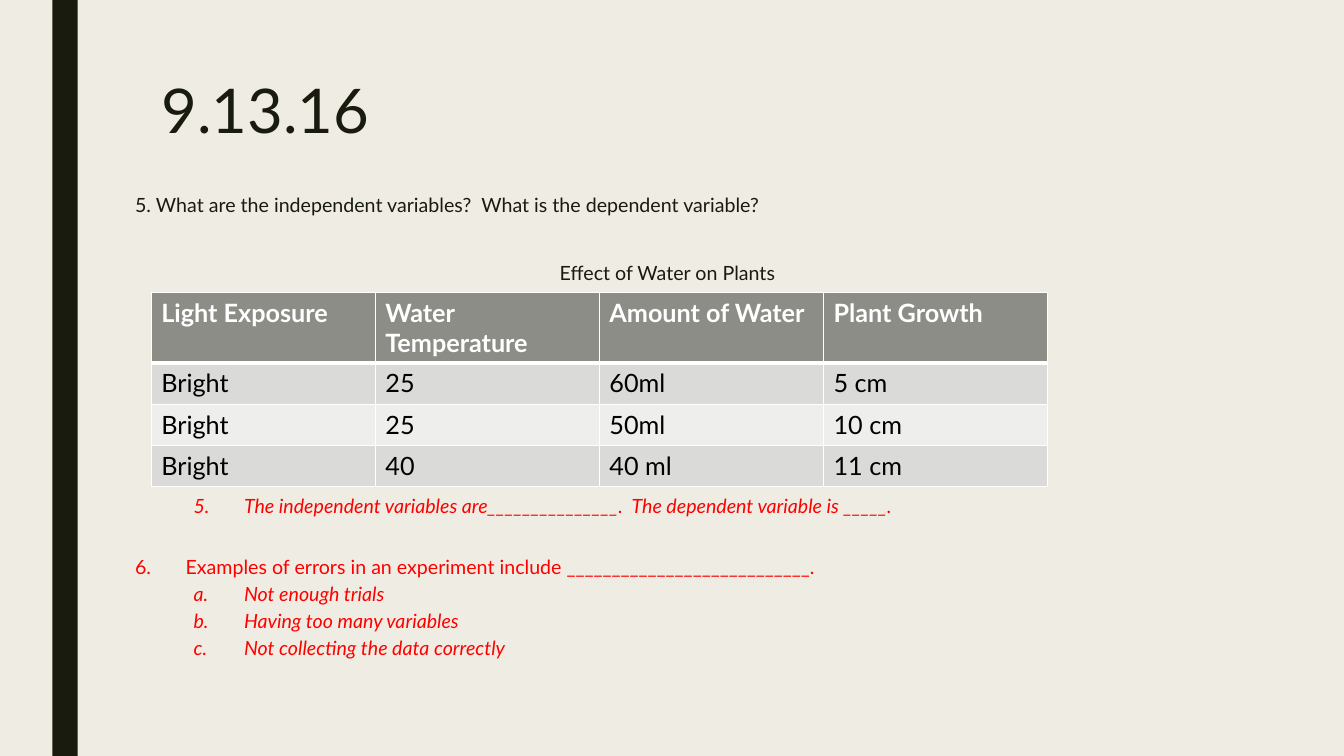
from lxml.etree import SubElement
from pptx import Presentation
from pptx.dml.color import RGBColor
from pptx.enum.shapes import MSO_SHAPE
from pptx.enum.text import MSO_ANCHOR, MSO_AUTO_SIZE, PP_ALIGN
from pptx.oxml.ns import qn
from pptx.util import Inches, Pt

CREAM = RGBColor(0xEF, 0xED, 0xE3)
INK = RGBColor(0x19, 0x1B, 0x0E)
RED = RGBColor(0xFF, 0x00, 0x00)
WHITE = RGBColor(0xFF, 0xFF, 0xFF)
BLACK = RGBColor(0x00, 0x00, 0x00)
HEADER_GRAY = RGBColor(0x8C, 0x8D, 0x86)
BAND_GRAYS = (RGBColor(0xEE, 0xEE, 0xED), RGBColor(0xDA, 0xDB, 0xD9))
FONT = "Lato"

PLANT_ROWS = [
    ("Light Exposure", "Water Temperature", "Amount of Water", "Plant Growth"),
    ("Bright", "25", "60ml", "5 cm"),
    ("Bright", "25", "50ml", "10 cm"),
    ("Bright", "40", "40 ml", "11 cm"),
]
QUESTION = {"color": INK, "italic": False, "level": 0, "margin": 0, "indent": 0}
ITEM = {"color": RED, "italic": False, "level": 0, "margin": 0.5, "indent": -0.5}
SUBITEM = {"color": RED, "italic": True, "level": 1, "margin": 1.08, "indent": -0.5}
BODY_LINES = [
    ("5. What are the independent variables?  What is the dependent variable?",
     QUESTION, PP_ALIGN.LEFT, 10, None),
    ("Effect of Water on Plants", QUESTION, PP_ALIGN.CENTER, 34, None),
    ("The independent variables are_______________.  The dependent variable is _____.",
     SUBITEM, PP_ALIGN.LEFT, 152, ("arabicPeriod", 5)),
    ("Examples of errors in an experiment include ___________________________.",
     ITEM, PP_ALIGN.LEFT, 29, ("arabicPeriod", 6)),
    ("Not enough trials", SUBITEM, PP_ALIGN.LEFT, 5, ("alphaLcPeriod", 1)),
    ("Having too many variables", SUBITEM, PP_ALIGN.LEFT, 5, ("alphaLcPeriod", 1)),
    ("Not collecting the data correctly", SUBITEM, PP_ALIGN.LEFT, 5, ("alphaLcPeriod", 1)),
]


def apply_format(target, values):
    for name, value in values.items():
        setattr(target, name, value)


def format_font(font, size, color, **values):
    apply_format(font, {"name": FONT, "size": Pt(size), **values})
    font.color.rgb = color


def place(shape, left, top, width, height):
    apply_format(shape, {"left": Inches(left), "top": Inches(top),
                         "width": Inches(width), "height": Inches(height)})


def prepare_text(shape):
    apply_format(shape.text_frame, {"word_wrap": True, "auto_size": MSO_AUTO_SIZE.NONE,
                                    "vertical_anchor": MSO_ANCHOR.TOP})


def add_sidebar(slide, left, top, width, height):
    sidebar = slide.shapes.add_shape(MSO_SHAPE.RECTANGLE, Inches(left), Inches(top),
                                     Inches(width), Inches(height))
    sidebar.shadow.inherit = False
    sidebar.fill.solid()
    sidebar.fill.fore_color.rgb = INK
    sidebar.line.fill.background()


def fill_title(slide, left, top, width, height):
    title = slide.shapes.title
    place(title, left, top, width, height)
    prepare_text(title)
    paragraph = title.text_frame.paragraphs[0]
    apply_format(paragraph, {"text": "9.13.16", "alignment": PP_ALIGN.LEFT,
                             "line_spacing": 0.89})
    format_font(paragraph.runs[0].font, 44, INK)


def set_numbering(paragraph, style, numbering):
    properties = paragraph._p.get_or_add_pPr()
    properties.set("marL", str(Inches(style["margin"])))
    properties.set("indent", str(Inches(style["indent"])))
    if numbering is None:
        SubElement(properties, qn("a:buNone"))
        return
    scheme, start = numbering
    SubElement(properties, qn("a:buFont"), typeface=FONT)
    SubElement(properties, qn("a:buAutoNum"), type=scheme, startAt=str(start))


def fill_body(slide, left, top, width, height):
    body = slide.placeholders[1]
    place(body, left, top, width, height)
    prepare_text(body)
    frame = body.text_frame
    for index, (text, style, alignment, before, numbering) in enumerate(BODY_LINES):
        paragraph = frame.add_paragraph() if index else frame.paragraphs[0]
        apply_format(paragraph, {"text": text, "level": style["level"],
                                 "alignment": alignment, "line_spacing": 0.74,
                                 "space_before": Pt(before), "space_after": Pt(2)})
        set_numbering(paragraph, style, numbering)
        format_font(paragraph.runs[0].font, 14, style["color"], italic=style["italic"])


def set_borders(cell, top_width, bottom_width):
    properties = cell._tc.get_or_add_tcPr()
    widths = {"a:lnL": 1, "a:lnR": 1, "a:lnT": top_width, "a:lnB": bottom_width}
    for tag, width in widths.items():
        border = SubElement(properties, qn(tag), w=str(Pt(width)))
        fill = SubElement(border, qn("a:solidFill"))
        SubElement(fill, qn("a:srgbClr"), val=str(WHITE))


def add_plant_table(slide, left, top, width, header_height, row_height):
    height = header_height + row_height * (len(PLANT_ROWS) - 1)
    table = slide.shapes.add_table(len(PLANT_ROWS), len(PLANT_ROWS[0]), Inches(left),
                                   Inches(top), Inches(width), Inches(height)).table
    for row_index, values in enumerate(PLANT_ROWS):
        is_header = row_index == 0
        table.rows[row_index].height = Inches(header_height if is_header else row_height)
        for column_index, value in enumerate(values):
            cell = table.cell(row_index, column_index)
            cell.text = value
            format_font(cell.text_frame.paragraphs[0].runs[0].font, 18,
                        WHITE if is_header else BLACK, bold=is_header)
            set_borders(cell, 3 if row_index == 1 else 1, 3 if is_header else 1)
            cell.fill.solid()
            cell.fill.fore_color.rgb = HEADER_GRAY if is_header else BAND_GRAYS[row_index % 2]


def main():
    presentation = Presentation()
    apply_format(presentation, {"slide_width": Inches(13.33), "slide_height": Inches(7.5)})
    slide = presentation.slides.add_slide(presentation.slide_layouts[1])
    slide.background.fill.solid()
    slide.background.fill.fore_color.rgb = CREAM
    add_sidebar(slide, 0.52, 0, 0.25, 7.5)
    fill_title(slide, 1.5, 0.75, 10.5, 1.62)
    fill_body(slide, 1.24, 1.92, 10.76, 5.05)
    add_plant_table(slide, 1.5, 2.9, 8.89, 0.7, 0.41)
    presentation.save("out.pptx")


if __name__ == "__main__":
    main()
